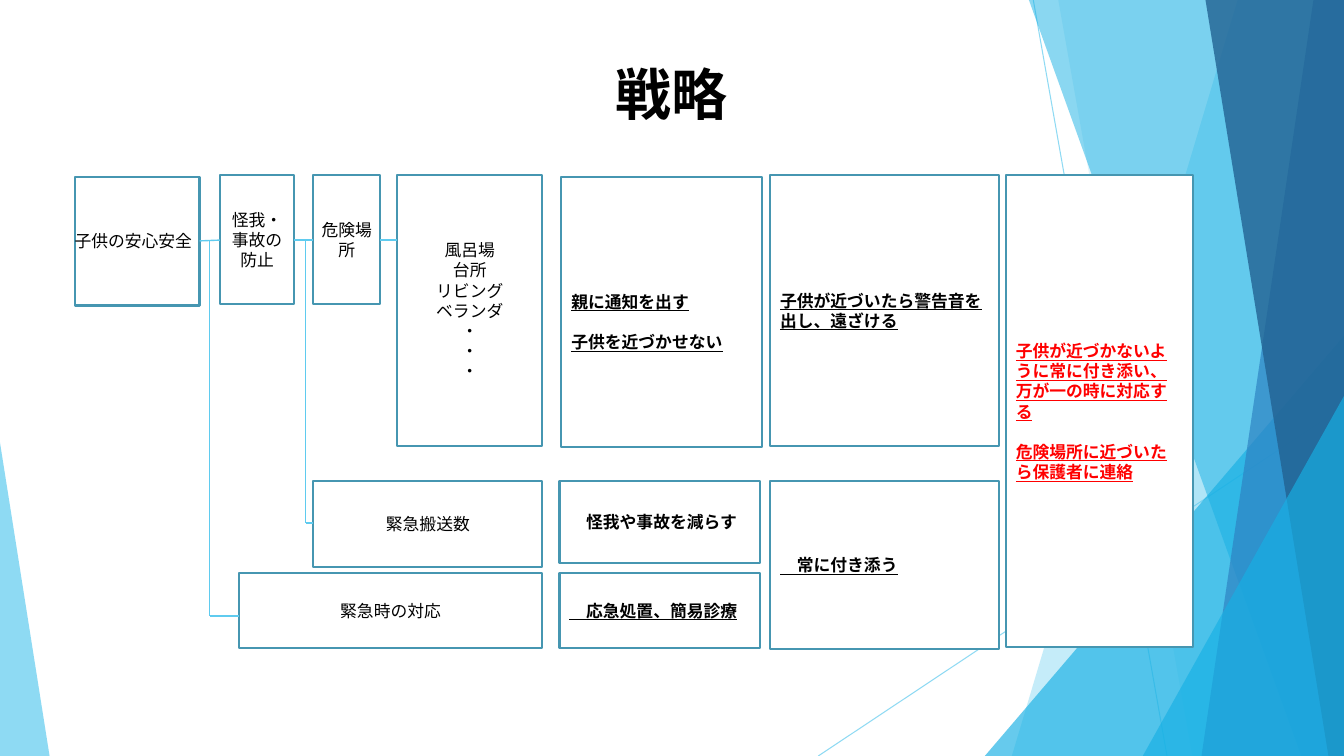
from lxml import etree
from pptx import Presentation
from pptx.dml.color import RGBColor
from pptx.enum.lang import MSO_LANGUAGE_ID
from pptx.enum.shapes import MSO_CONNECTOR, MSO_SHAPE
from pptx.enum.text import MSO_ANCHOR, MSO_AUTO_SIZE, PP_ALIGN
from pptx.oxml.ns import qn
from pptx.util import Cm, Pt


def paint(fmt, color, alpha=100):
    fmt.solid()
    fmt.fore_color.rgb = RGBColor.from_string(color)
    if alpha < 100:
        clr = fmt._xPr.find(".//" + qn("a:srgbClr"))
        etree.SubElement(clr, qn("a:alpha"), val=str(alpha * 1000))


def write(p, text, color, **formats):
    r = p.add_run()
    r.text = text
    for name, value in formats.items():
        setattr(r.font, name, value)
    r.font.language_id = MSO_LANGUAGE_ID.JAPANESE
    paint(r.font.fill, color)
    etree.SubElement(r.font._element, qn("a:ea"), typeface="Noto Sans CJK JP")


W, H = 33.87, 19.05
prs = Presentation()
prs.slide_width, prs.slide_height = Cm(W), Cm(H)
s = prs.slides.add_slide(prs.slide_layouts[5])

title = s.shapes.title
title.left, title.top, title.width, title.height = Cm(15.24), Cm(1.37), Cm(3.35), Cm(1.96)
tf = title.text_frame
frame = {"word_wrap": False, "auto_size": MSO_AUTO_SIZE.NONE, "vertical_anchor": MSO_ANCHOR.MIDDLE}
for name, value in frame.items():
    setattr(tf, name, value)
tf.paragraphs[0].alignment = PP_ALIGN.CENTER
write(tf.paragraphs[0], "戦略", "000000", name="Noto Sans CJK JP", size=Pt(40), bold=True)

rays = [(26.04, 0, 29.41, H), (W, 10.24, 20.62, H)]
links = [
    (9.58, 6.05, 10.01, 6.05),
    (5.03, 6.07, 5.54, 6.05),
    (7.42, 6.05, 7.9, 6.05),
    (5.28, 6.07, 5.28, 15.52),
    (5.28, 15.52, 6.02, 15.52),
    (7.7, 6.05, 7.7, 13.18),
    (7.7, 13.18, 7.9, 13.18),
]
lines = {}
for group, ends, width, alpha in [("rays", rays, 0.75, 70), ("links", links, 1, 100)]:
    lines[group] = []
    for end in ends:
        cn = s.shapes.add_connector(MSO_CONNECTOR.STRAIGHT, *map(Cm, end))
        paint(cn.line.fill, "5FCBEF", alpha)
        cn.line.width = Pt(width)
        etree.SubElement(cn._element.spPr, qn("a:effectLst"))
        lines[group].append(cn)

facets = [
    ("5FCBEF", 36, (31.19, 25.5)),
    ("5FCBEF", 20, (26.67, 30.05)),
    ("17B0E4", 66, (24.82, 8.46, 9.05, 10.59, 1)),
    ("17B0E4", 50, (25.93, 32.79)),
    ("2E83C3", 70, (33.1, 30.28)),
    ("226292", 80, (30.38, 33.48)),
    ("17B0E4", 66, (28.8, 9.98, 5.07, 9.07, 1)),
    ("5FCBEF", 70, (0, 11.15, 1.25, 7.9, 0)),
]
for color, alpha, geom in facets:
    if len(geom) == 2:
        top, bottom = geom
        fb = s.shapes.build_freeform(Cm(top), 0)
        fb.add_line_segments([(Cm(x), Cm(y)) for x, y in [(W, 0), (W, H), (bottom, H)]])
        sp = fb.convert_to_shape()
    else:
        sp = s.shapes.add_shape(MSO_SHAPE.ISOSCELES_TRIANGLE, *map(Cm, geom[:4]))
        sp.adjustments[0] = geom[4]
    paint(sp.fill, color, alpha)
    sp.line.fill.background()
    sp.shadow.inherit = False

plain = {"bold": False, "underline": False}
bold = {"bold": True, "underline": False}
marked = {"bold": True, "underline": True}
LEFT, CENTER = PP_ALIGN.LEFT, PP_ALIGN.CENTER
GAP = Pt(14.4)
boxes = [
    ((1.88, 4.45, 3.15, 3.25), ["子供の安心安全"], LEFT, plain, 0),
    ((5.54, 4.42, 1.88, 3.25), ["怪我・事故の防止"], CENTER, plain, 0.25),
    ((7.9, 4.42, 1.68, 3.25), ["危険場所"], CENTER, plain, 0),
    ((19.41, 4.42, 5.77, 6.81), ["子供が近づいたら警告音を出し、遠ざける"], LEFT, marked, 0.25),
    ((25.35, 4.42, 4.72, 11.89),
     ["子供が近づかないように常に付き添い、万が一の時に対応する", "危険場所に近づいたら保護者に連絡"],
     LEFT, marked, 0.25),
    ((7.9, 12.12, 5.77, 2.16), ["緊急搬送数"], CENTER, plain, 0.25),
    ((19.41, 12.12, 5.77, 4.24), ["　常に付き添う"], LEFT, marked, 0.25),
    ((10.01, 4.42, 3.66, 6.81),
     ["風呂場", "台所", "リビング", "ベランダ", "・", "・", "・"], CENTER, plain, 0),
    ((14.15, 4.45, 5.05, 6.81), ["親に通知を出す", "子供を近づかせない"], LEFT, marked, 0.25),
    ((14.1, 12.12, 5.05, 2.06), ["　怪我や事故を減らす"], LEFT, bold, 0.25),
    ((6.02, 14.43, 7.65, 1.91), ["緊急時の対応"], CENTER, plain, 0.25),
    ((14.1, 14.43, 5.05, 1.91), ["　応急処置、簡易診療"], LEFT, marked, 0.25),
]
for place, texts, align, style, inset in boxes:
    sp = s.shapes.add_shape(MSO_SHAPE.RECTANGLE, *map(Cm, place))
    paint(sp.fill, "FFFFFF")
    paint(sp.line.fill, "4696B1")
    sp.line.width = Pt(1.5)
    sp.shadow.inherit = False
    tf = sp.text_frame
    first_gap = GAP if texts[0] == "親に通知を出す" else 0
    frame = {
        "word_wrap": True,
        "vertical_anchor": MSO_ANCHOR.MIDDLE,
        "margin_left": Cm(inset),
        "margin_right": Cm(inset),
        "margin_top": Cm(0.13) + first_gap,
        "margin_bottom": Cm(0.13),
    }
    for name, value in frame.items():
        setattr(tf, name, value)
    color = "FF0000" if "常に付き添い" in texts[0] else "000000"
    for i, text in enumerate(texts):
        p = tf.add_paragraph() if i else tf.paragraphs[0]
        p.alignment = align
        if i and style is marked:
            p.space_before = GAP
        write(p, text, color, name="Arial", size=Pt(12), **style)

for cn in lines["links"]:
    s.shapes._spTree.append(cn._element)

prs.save("out.pptx")
